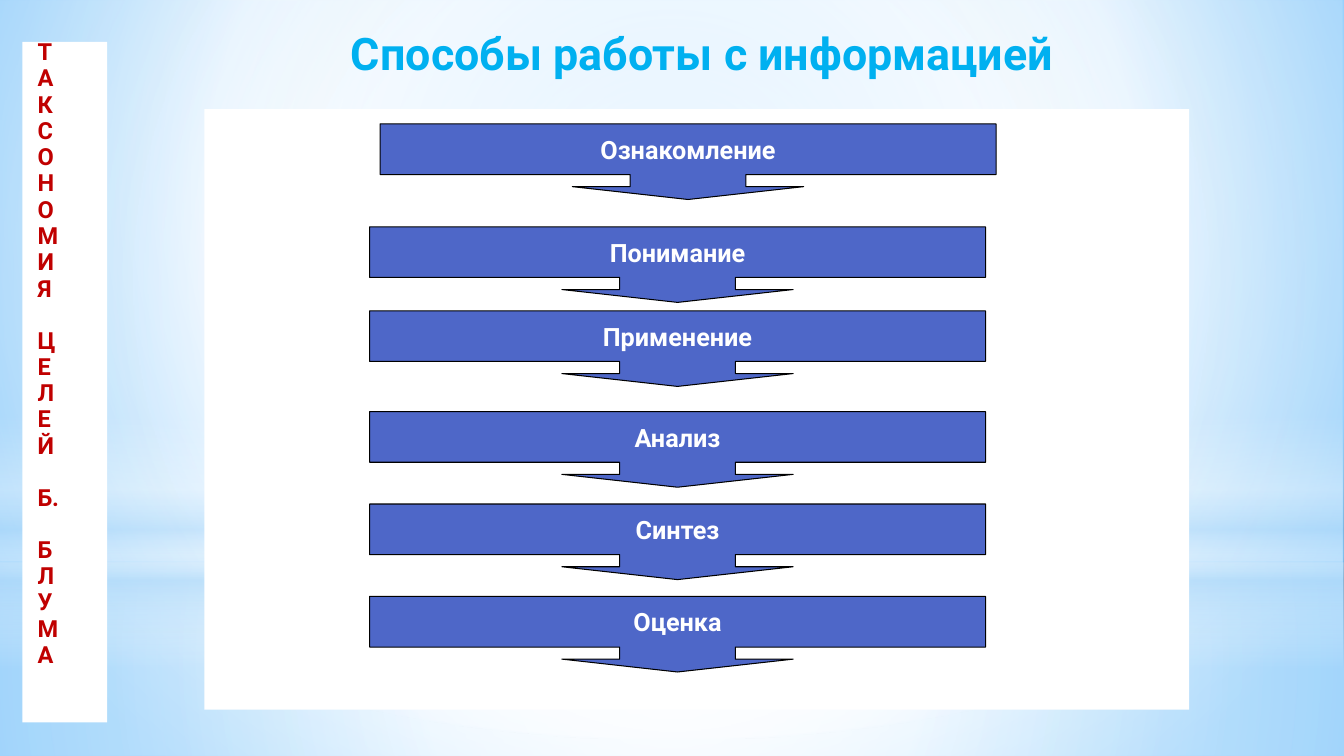
from pptx import Presentation
from pptx.dml.color import RGBColor
from pptx.enum.shapes import MSO_SHAPE
from pptx.enum.text import MSO_ANCHOR, MSO_AUTO_SIZE, PP_ALIGN
from pptx.oxml import parse_xml
from pptx.oxml.ns import nsdecls, qn
from pptx.util import Pt

WHITE = RGBColor(0xFF, 0xFF, 0xFF)
BLACK = RGBColor(0x00, 0x00, 0x00)
RED = RGBColor(0xC0, 0x00, 0x00)
CYAN = RGBColor(0x00, 0xB0, 0xF0)
BLUE = RGBColor(0x4E, 0x67, 0xC8)
PALE = RGBColor(0xB4, 0xDC, 0xFA)
SKY = RGBColor(0x9E, 0xD5, 0xFF)
DEEP = RGBColor(0x5B, 0xB9, 0xFF)

CENTER = (50, 50, 50, 50)
STEPS = [
    ("Ознакомление", 271.5, 88.5),
    ("Понимание", 264, 162),
    ("Применение", 264, 222),
    ("Анализ", 264, 294),
    ("Синтез", 264, 360),
    ("Оценка", 264, 426),
]
WORDS = [list("ТАКСОНОМИЯ"), list("ЦЕЛЕЙ"), ["Б."], list("БЛУМА")]


def write(para, text, size=18, color=WHITE, align=PP_ALIGN.LEFT, face="Roboto"):
    para.alignment = align
    run = para.add_run()
    run.text = text
    run.font.name = face
    run.font.size = Pt(size)
    run.font.bold = True
    run.font.color.rgb = color


def blend(parent, stops, focus=None):
    marks = "".join(
        f'<a:gs pos="{pos * 1000}"><a:srgbClr val="{color}">'
        f'<a:alpha val="{alpha * 1000}"/></a:srgbClr></a:gs>'
        for pos, color, alpha in stops
    )
    if focus:
        sides = " ".join(f'{side}="{part * 1000}"' for side, part in zip("ltrb", focus))
        way = f'<a:path path="circle"><a:fillToRect {sides}/></a:path>'
    else:
        way = '<a:lin ang="5400000" scaled="0"/>'
    fill = parse_xml(
        f'<a:gradFill {nsdecls("a")} rotWithShape="1"><a:gsLst>{marks}</a:gsLst>{way}</a:gradFill>'
    )
    parent.replace(parent.find(qn("a:solidFill")), fill)


class Board:
    def __init__(self, deck):
        self.slide = deck.slides.add_slide(deck.slide_layouts[1])
        self.shapes = self.slide.shapes

    def back(self, stops, focus):
        self.slide.background.fill.solid()
        blend(self.slide.element.find(".//" + qn("p:bgPr")), stops, focus)

    def box(self, kind, left, top, width, height, color=WHITE):
        shape = self.shapes.add_shape(kind, Pt(left), Pt(top), Pt(width), Pt(height))
        shape.shadow.inherit = False
        shape.fill.solid()
        shape.fill.fore_color.rgb = color
        shape.line.fill.background()
        return shape

    def glow(self, kind, top, height, stops, focus=None):
        shape = self.box(kind, 0, top, 960, height)
        blend(shape.element.spPr, stops, focus)

    def place(self, holder, left, top, width, height):
        self.shapes.element.append(holder.element)
        holder.left, holder.top = Pt(left), Pt(top)
        holder.width, holder.height = Pt(width), Pt(height)
        frame = holder.text_frame
        frame.auto_size = MSO_AUTO_SIZE.NONE
        frame.vertical_anchor = MSO_ANCHOR.TOP
        frame.word_wrap = True
        return frame

    def title(self, text):
        frame = self.place(self.shapes.title, 243.5, 15, 538, 46)
        write(frame.paragraphs[0], text, size=32, color=CYAN)

    def side(self, words):
        holder = self.slide.placeholders[1]
        frame = self.place(holder, 16, 30, 60.5, 486)
        holder.fill.solid()
        holder.fill.fore_color.rgb = WHITE
        for row, word in enumerate(words):
            for col, sign in enumerate(word):
                first = row == col == 0
                para = frame.paragraphs[0] if first else frame.add_paragraph()
                props = para._p.get_or_add_pPr()
                props.set("marL", str(Pt(18)))
                props.set("indent", str(Pt(-14.4)))
                props.append(parse_xml(f'<a:buNone {nsdecls("a")}/>'))
                para.line_spacing = 0.6
                para.space_before = Pt(0 if first else 3.65 if col else 22.1)
                para.space_after = Pt(3)
                write(para, sign, size=16.8, color=RED)

    def step(self, text, left, top):
        shape = self.box(MSO_SHAPE.DOWN_ARROW_CALLOUT, left, top, 440, 54, BLUE)
        for spot, value in enumerate((1.53, 1.53, 0.17, 0.67)):
            shape.adjustments[spot] = value
        shape.line.color.rgb = BLACK
        shape.line.width = Pt(0.75)
        frame = shape.text_frame
        frame.word_wrap = False
        frame.vertical_anchor = MSO_ANCHOR.MIDDLE
        write(frame.paragraphs[0], text, align=PP_ALIGN.CENTER)


def main():
    deck = Presentation()
    deck.slide_width, deck.slide_height = Pt(960), Pt(540)
    board = Board(deck)
    rect = MSO_SHAPE.RECTANGLE
    board.back([(0, SKY, 100), (60, WHITE, 100), (100, DEEP, 100)], (20, 10, 20, 60))
    board.glow(rect, 402, 138, [(0, WHITE, 91), (37, WHITE, 76), (100, PALE, 79)], CENTER)
    board.glow(rect, 0, 402, [(0, WHITE, 89), (48, WHITE, 62), (100, PALE, 79)], CENTER)
    board.glow(rect, 297, 180, [
        (0, WHITE, 0), (29, WHITE, 30), (45, PALE, 40),
        (55, WHITE, 26), (65, PALE, 60), (100, WHITE, 0),
    ])
    board.glow(MSO_SHAPE.OVAL, 126, 402, [(0, WHITE, 100), (56, WHITE, 0)], CENTER)
    board.box(rect, 146, 78, 703.5, 429)
    board.side(WORDS)
    for text, left, top in STEPS:
        board.step(text, left, top)
    board.title("Способы работы с информацией")
    deck.save("out.pptx")


if __name__ == "__main__":
    main()
